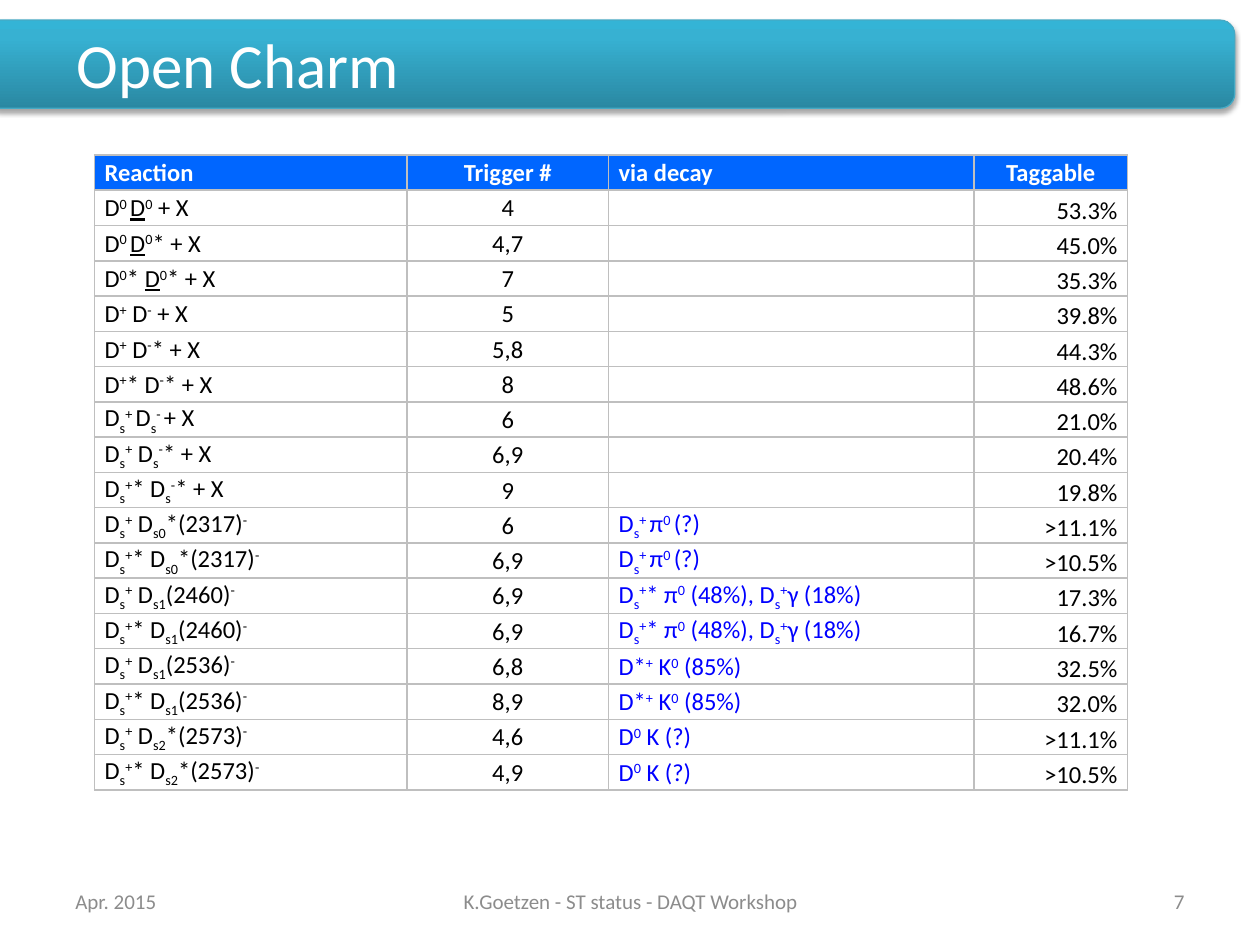
from dataclasses import dataclass

from lxml import etree
from pptx import Presentation
from pptx.dml.color import RGBColor
from pptx.enum.shapes import MSO_SHAPE
from pptx.enum.text import MSO_ANCHOR, PP_ALIGN
from pptx.oxml import parse_xml
from pptx.oxml.ns import qn
from pptx.util import Inches, Pt

LEFT, CENTER, RIGHT = PP_ALIGN.LEFT, PP_ALIGN.CENTER, PP_ALIGN.RIGHT
MIDDLE, BOTTOM = MSO_ANCHOR.MIDDLE, MSO_ANCHOR.BOTTOM
ROUNDED = MSO_SHAPE.ROUNDED_RECTANGLE
NS = 'xmlns:a="http://schemas.openxmlformats.org/drawingml/2006/main"'


@dataclass(frozen=True)
class Theme:
    font: str = "Calibri"
    white: str = "FFFFFF"
    text: str = "000000"
    decay: str = "0000FF"
    header: str = "0066FF"
    border: str = "BFBFBF"
    footer: str = "8C8C8C"
    bar_line: str = "46AAC5"
    bar_stops: tuple = ((0, "2A88A2"), (80, "37B1D2"), (100, "34B4D6"))
    title_size: int = 36
    table_size: int = 14
    footer_size: int = 12


THEME = Theme()

# Runs are parted by "|"; a leading ^, _ or ~ means superscript, subscript or underline.
HEADER = ("Reaction", "Trigger #", "via decay", "Taggable")
DS_PI = "D|_s|^+ |π|^0 |(?)"
DS_PI_GAMMA = "D|_s|^+|* π|^0| (48%), D|_s|^+|γ (18%)"
D_STAR_K = "D*|^+| K|^0| (85%)"
D_K = "D|^0| K (?)"
ROWS = (
    ("D|^0 |~D|^0| + X", "4", "", "53.3%"),
    ("D|^0 |~D|^0|* + X", "4,7", "", "45.0%"),
    ("D|^0|* |~D|^0|* + X", "7", "", "35.3%"),
    ("D|^+| D|^-| + X", "5", "", "39.8%"),
    ("D|^+| D|^-|* + X", "5,8", "", "44.3%"),
    ("D|^+|* D|^-|* + X", "8", "", "48.6%"),
    ("D|_s|^+ |D|_s|^- |+ X", "6", "", "21.0%"),
    ("D|_s|^+| D|_s|^-|* + X", "6,9", "", "20.4%"),
    ("D|_s|^+|* D|_s|^-|* + X", "9", "", "19.8%"),
    ("D|_s|^+| D|_s0|*(2317)|^-", "6", DS_PI, ">11.1%"),
    ("D|_s|^+|* D|_s0|*(2317)|^-", "6,9", DS_PI, ">10.5%"),
    ("D|_s|^+| D|_s1|(2460)|^-", "6,9", DS_PI_GAMMA, "17.3%"),
    ("D|_s|^+|* D|_s1|(2460)|^-", "6,9", DS_PI_GAMMA, "16.7%"),
    ("D|_s|^+| D|_s1|(2536)|^-", "6,8", D_STAR_K, "32.5%"),
    ("D|_s|^+|* D|_s1|(2536)|^-", "8,9", D_STAR_K, "32.0%"),
    ("D|_s|^+| D|_s2|*(2573)|^-", "4,6", D_K, ">11.1%"),
    ("D|_s|^+|* D|_s2|*(2573)|^-", "4,9", D_K, ">10.5%"),
)
COL_WIDTHS = (2.48, 1.6, 2.9, 1.22)
ROW_HEIGHT = 0.28
HEADER_ALIGN = (LEFT, CENTER, LEFT, CENTER)
BODY_ALIGN = (LEFT, CENTER, LEFT, RIGHT)
BODY_ANCHOR = (MIDDLE, MIDDLE, MIDDLE, BOTTOM)
BODY_COLOR = (THEME.text, THEME.text, THEME.decay, THEME.text)


def add_runs(p, markup, size, color, bold=False):
    for part in markup.split("|"):
        mark = part[0] if part[0] in "^_~" else ""
        r = p.add_run()
        r.text = part[len(mark):]
        f = r.font
        f.name, f.size, f.bold = THEME.font, Pt(size), bold
        f.color.rgb = RGBColor.from_string(color)
        if mark == "~":
            f.underline = True
        elif mark:
            r._r.get_or_add_rPr().set("baseline", "30000" if mark == "^" else "-25000")


def add_text(s, box, text, size, color, align=LEFT):
    tf = s.shapes.add_textbox(*map(Inches, box)).text_frame
    tf.word_wrap = True
    tf.vertical_anchor = MIDDLE
    p = tf.paragraphs[0]
    p.alignment = align
    add_runs(p, text, size, color)


def add_title_bar(s):
    sp = s.shapes.add_shape(ROUNDED, *map(Inches, (-0.12, 0.16, 9.92, 0.7)))
    sp.line.color.rgb = RGBColor.from_string(THEME.bar_line)
    sp.line.width = Pt(0.75)
    stops = "".join(
        f'<a:gs pos="{pos * 1000}"><a:srgbClr val="{color}"/></a:gs>'
        for pos, color in THEME.bar_stops
    )
    spPr = sp._element.spPr
    spPr.find(qn("a:ln")).addprevious(parse_xml(
        f'<a:gradFill {NS} rotWithShape="1"><a:gsLst>{stops}</a:gsLst>'
        '<a:lin ang="16200000" scaled="0"/></a:gradFill>'
    ))
    spPr.append(parse_xml(
        f'<a:effectLst {NS}><a:outerShdw blurRad="{Pt(3.1)}" dist="{Pt(1.8)}" '
        'dir="5400000" rotWithShape="0"><a:srgbClr val="000000">'
        '<a:alpha val="35000"/></a:srgbClr></a:outerShdw></a:effectLst>'
    ))


def set_borders(cell):
    tcPr = cell._tc.get_or_add_tcPr()
    for side in "LRTB":
        tcPr.append(parse_xml(
            f'<a:ln{side} {NS} w="{Pt(1)}"><a:solidFill>'
            f'<a:srgbClr val="{THEME.border}"/></a:solidFill></a:ln{side}>'
        ))


def fill_cell(cell, markup, align, anchor, color, fill=None):
    """Style one cell; a cell with a fill is a header cell."""
    cell.margin_left = cell.margin_right = Inches(0.08)
    cell.margin_top, cell.margin_bottom = Inches(0.01), 0
    cell.vertical_anchor = anchor
    set_borders(cell)
    if fill:
        cell.fill.solid()
        cell.fill.fore_color.rgb = RGBColor.from_string(fill)
    else:
        cell.fill.background()
    p = cell.text_frame.paragraphs[0]
    p.alignment = align
    if markup:
        add_runs(p, markup, THEME.table_size, color, bold=bool(fill))
    else:  # keeps an empty cell from growing its row
        etree.SubElement(p._p, qn("a:endParaRPr")).set("sz", str(THEME.table_size * 100))


def add_reaction_table(s):
    n = len(ROWS) + 1
    box = (0.75, 1.23, sum(COL_WIDTHS), n * ROW_HEIGHT)
    table = s.shapes.add_table(n, len(HEADER), *map(Inches, box)).table
    table.first_row = table.horz_banding = False
    for col, width in zip(table.columns, COL_WIDTHS):
        col.width = Inches(width)
    for row in table.rows:
        row.height = Inches(ROW_HEIGHT)
    for c, (text, align) in enumerate(zip(HEADER, HEADER_ALIGN)):
        fill_cell(table.cell(0, c), text, align, MIDDLE, THEME.white, THEME.header)
    for r, values in enumerate(ROWS, 1):
        for c, style in enumerate(zip(values, BODY_ALIGN, BODY_ANCHOR, BODY_COLOR)):
            fill_cell(table.cell(r, c), *style)


def add_footer(s):
    for left, width, text, align in (
        (0.5, 2.33, "Apr. 2015", LEFT),
        (3.42, 3.17, "K.Goetzen - ST status - DAQT Workshop", CENTER),
        (7.17, 2.33, "7", RIGHT),
    ):
        add_text(s, (left, 6.95, width, 0.4), text, THEME.footer_size, THEME.footer, align)


def main():
    prs = Presentation()
    prs.slide_width, prs.slide_height = Inches(10), Inches(7.5)
    s = prs.slides.add_slide(prs.slide_layouts[6])
    add_title_bar(s)
    add_text(s, (0.51, 0.23, 8.99, 0.54), "Open Charm", THEME.title_size, THEME.white)
    add_reaction_table(s)
    add_footer(s)
    prs.save("out.pptx")


if __name__ == "__main__":
    main()
